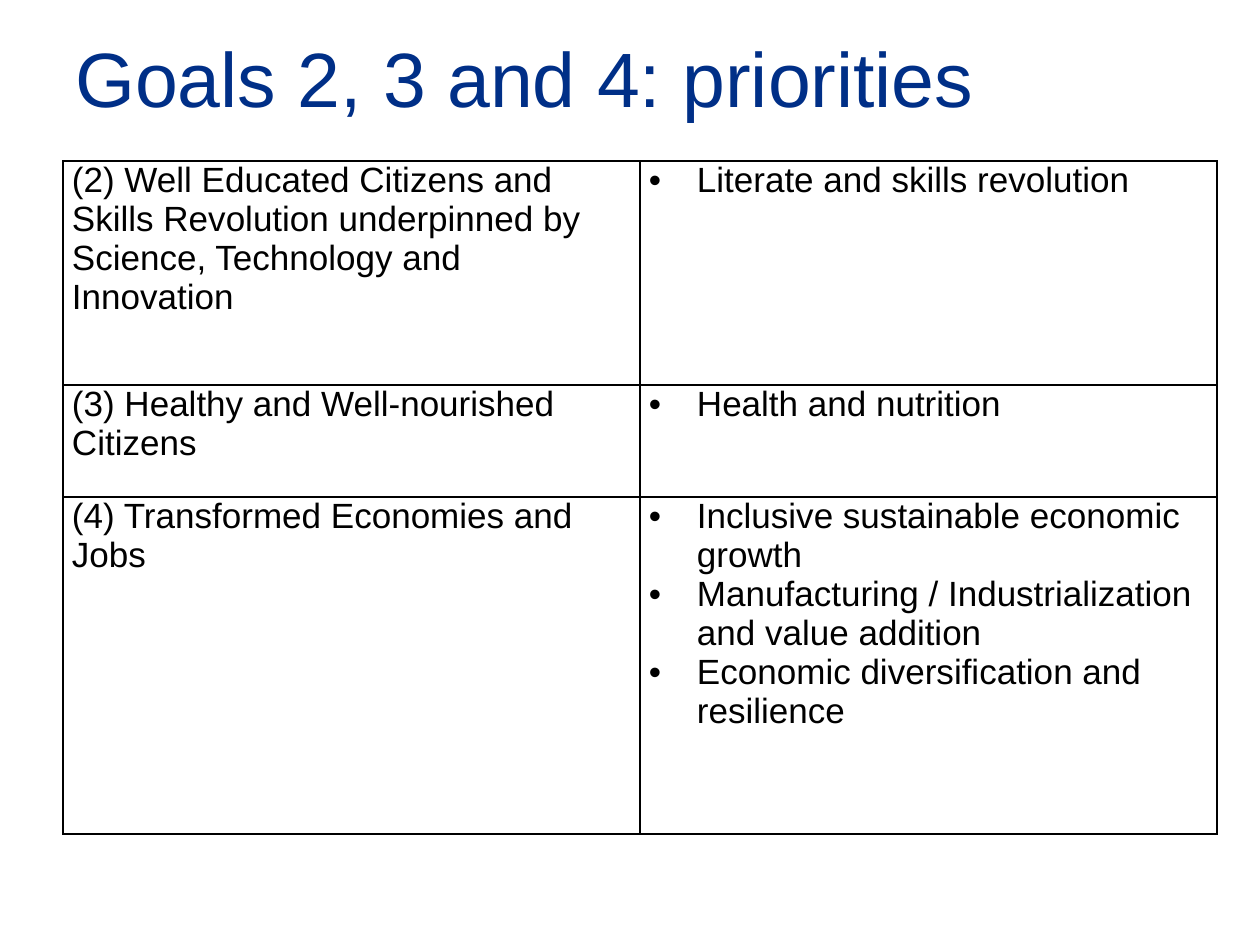
"""Build the slide listing the priorities of goals 2, 3 and 4."""
from dataclasses import dataclass

from lxml import etree
from pptx import Presentation
from pptx.dml.color import RGBColor
from pptx.enum.text import MSO_ANCHOR
from pptx.oxml.ns import qn
from pptx.util import Emu, Pt

MIDDLE = MSO_ANCHOR.MIDDLE
TOP = MSO_ANCHOR.TOP
FONT = "Arial"
BLUE = "002F87"
BLACK = "000000"
INSET = 9
INDENT = 48
COLUMN_WIDTH = 577


@dataclass(frozen=True)
class Goal:
    """A goal, its priorities and the height of its row."""
    name: str
    priorities: tuple[str, ...]
    height: int


GOALS = (
    Goal("(2) Well Educated Citizens and Skills Revolution underpinned by "
         "Science, Technology and Innovation",
         ("Literate and skills revolution",), 224),
    Goal("(3) Healthy and Well-nourished Citizens",
         ("Health and nutrition",), 112),
    Goal("(4) Transformed Economies and Jobs",
         ("Inclusive sustainable economic growth",
          "Manufacturing / Industrialization and value addition",
          "Economic diversification and resilience"), 337),
)


def px(n: int) -> Emu:
    """Turn pixels into EMU at 126 pixels to the inch."""
    return Emu(round(n * 914400 / 126))


def rgb(color: str) -> RGBColor:
    """Turn a hex string into a colour."""
    return RGBColor.from_string(color)


def style(p, size: int, color: str) -> None:
    """Set the font of a paragraph."""
    p.font.name = FONT
    p.font.size = Pt(size)
    p.font.color.rgb = rgb(color)


def add_bullet(p) -> None:
    """Give a paragraph a hanging bullet."""
    pPr = p._p.get_or_add_pPr()
    pPr.set("marL", str(px(INDENT)))
    pPr.set("indent", str(-px(INDENT)))
    bullet = etree.Element(qn("a:buChar"), char="•")
    font = etree.Element(qn("a:buFont"), typeface=FONT)
    pPr.insert(0, bullet)
    pPr.insert(0, font)


def add_borders(cell) -> None:
    """Draw a thin black line on each side of a cell."""
    tcPr = cell._tc.get_or_add_tcPr()
    for i, side in enumerate(("a:lnL", "a:lnR", "a:lnT", "a:lnB")):
        line = etree.Element(qn(side), w=str(Pt(1)))
        fill = etree.SubElement(line, qn("a:solidFill"))
        etree.SubElement(fill, qn("a:srgbClr"), val=BLACK)
        tcPr.insert(i, line)


def fill_cell(cell, lines: tuple[str, ...], bulleted: bool) -> None:
    """Write one paragraph per line into a bordered, unfilled cell."""
    cell.fill.background()
    cell.vertical_anchor = TOP
    cell.margin_left = cell.margin_right = px(INSET)
    cell.margin_top = cell.margin_bottom = 0
    tf = cell.text_frame
    tf.text = "\n".join(lines)
    for p in tf.paragraphs:
        style(p, 20, BLACK)
        if bulleted:
            add_bullet(p)
    add_borders(cell)


def add_title(s, text: str) -> None:
    """Add the slide title."""
    tf = s.shapes.add_textbox(px(63), px(14), px(1134), px(126)).text_frame
    tf.word_wrap = True
    tf.vertical_anchor = MIDDLE
    tf.text = text
    style(tf.paragraphs[0], 44, BLUE)


def add_goals(s, goals: tuple[Goal, ...]) -> None:
    """Add the table of goals and priorities."""
    table = s.shapes.add_table(
        len(goals), 2, px(63), px(161), px(2 * COLUMN_WIDTH),
        px(sum(goal.height for goal in goals))).table
    table.first_row = table.horz_banding = False
    for column in table.columns:
        column.width = px(COLUMN_WIDTH)
    for row, goal in zip(table.rows, goals):
        row.height = px(goal.height)
        fill_cell(row.cells[0], (goal.name,), False)
        fill_cell(row.cells[1], goal.priorities, True)


def main() -> None:
    """Build and save the slide."""
    prs = Presentation()
    prs.slide_width, prs.slide_height = px(1260), px(945)
    s = prs.slides.add_slide(prs.slide_layouts[6])
    add_title(s, "Goals 2, 3 and 4: priorities")
    add_goals(s, GOALS)
    prs.save("out.pptx")


if __name__ == "__main__":
    main()
